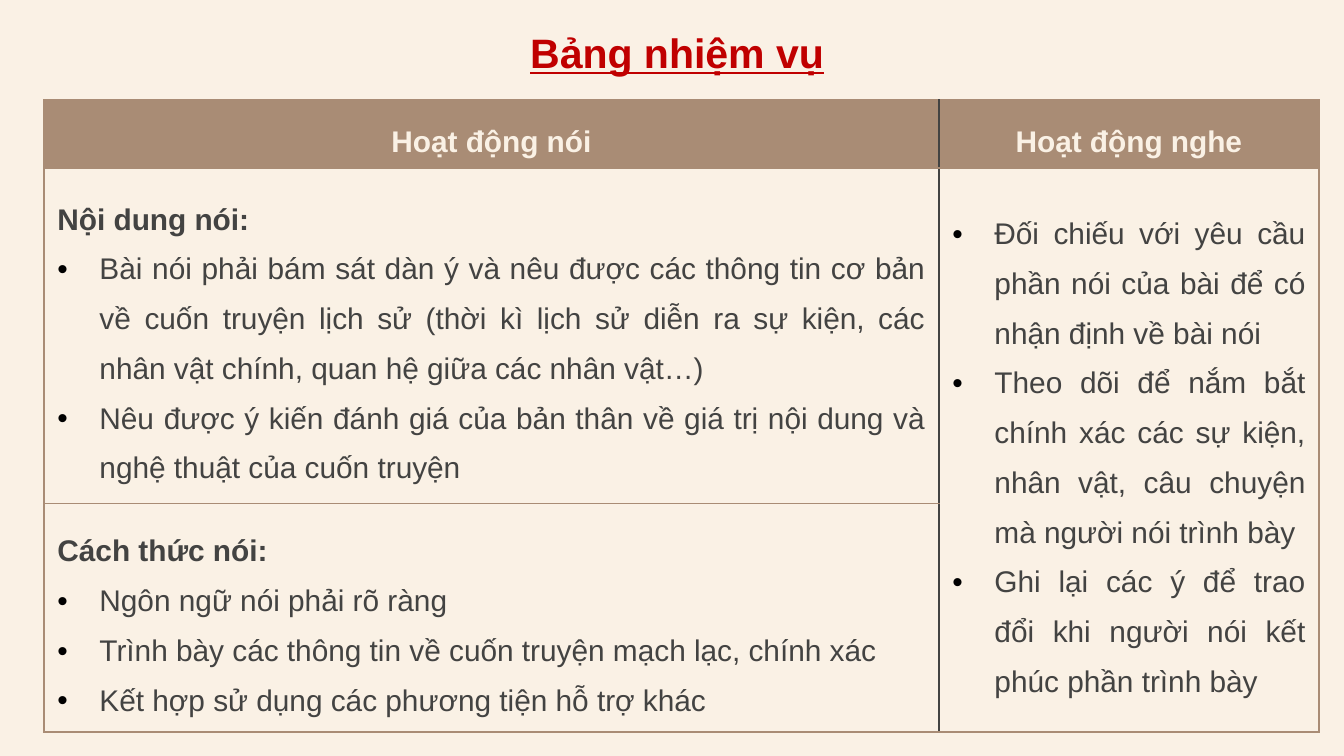
from dataclasses import dataclass

from lxml.etree import SubElement
from pptx import Presentation
from pptx.dml.color import RGBColor
from pptx.enum.text import MSO_ANCHOR, PP_ALIGN
from pptx.oxml.ns import qn
from pptx.util import Emu, Pt


@dataclass(frozen=True)
class Theme:
    """Colours, fonts and type sizes of the slide."""
    background: str = "FAF1E5"
    title: str = "C00000"
    brown: str = "A98C75"
    dark: str = "434342"
    bullet: str = "000000"
    font: str = "Arial"
    title_size: int = 22
    body_size: int = 16
    thin: float = 0.75
    thick: float = 1.5


THEME = Theme()
EMU_PER_PX = 914400 / 134.4
COLUMNS = (895, 380)
ROWS = (68, 335, 228)
HEADERS = ("Hoạt động nói", "Hoạt động nghe")
SPEAKING_CONTENT = (
    "Bài nói phải bám sát dàn ý và nêu được các thông tin cơ bản về cuốn truyện lịch sử "
    "(thời kì lịch sử diễn ra sự kiện, các nhân vật chính, quan hệ giữa các nhân vật…)",
    "Nêu được ý kiến đánh giá của bản thân về giá trị nội dung và nghệ thuật của cuốn truyện",
)
SPEAKING_MANNER = (
    "Ngôn ngữ nói phải rõ ràng",
    "Trình bày các thông tin về cuốn truyện mạch lạc, chính xác",
    "Kết hợp sử dụng các phương tiện hỗ trợ khác",
)
LISTENING = (
    "Đối chiếu với yêu cầu phần nói của bài để có nhận định về bài nói",
    "Theo dõi để nắm bắt chính xác các sự kiện, nhân vật, câu chuyện mà người nói trình bày",
    "Ghi lại các ý để trao đổi khi người nói kết phúc phần trình bày",
)


def px(length):
    """Turn pixels into EMU."""
    return Emu(round(length * EMU_PER_PX))


def rgb(color):
    """Turn a hex string into a colour."""
    return RGBColor.from_string(color)


def style_paragraph(paragraph, color, size, bold, alignment):
    """Format a paragraph and its runs."""
    paragraph.alignment = alignment
    for run in paragraph.runs:
        run.font.name = THEME.font
        run.font.size = Pt(size)
        run.font.bold = bold
        run.font.color.rgb = rgb(color)


def add_bullet(paragraph):
    """Give a paragraph a hanging bullet."""
    properties = paragraph._p.get_or_add_pPr()
    properties.set("marL", str(px(42)))
    properties.set("indent", str(-px(42)))
    color = SubElement(properties, qn("a:buClr"))
    SubElement(color, qn("a:srgbClr"), val=THEME.bullet)
    SubElement(properties, qn("a:buFont"), typeface=THEME.font)
    SubElement(properties, qn("a:buChar"), char="•")


def set_border(cell, side, color, width):
    """Draw one side of a cell."""
    line = SubElement(cell._tc.get_or_add_tcPr(), qn(f"a:ln{side}"), w=str(Pt(width)))
    fill = SubElement(line, qn("a:solidFill"))
    SubElement(fill, qn("a:srgbClr"), val=color)


def set_borders(cell, divider):
    """Draw all sides, with the column divider dark and thick."""
    for side in "LRTB":
        if side == divider:
            set_border(cell, side, THEME.dark, THEME.thick)
        else:
            set_border(cell, side, THEME.brown, THEME.thin)


def fill_header(cell, text):
    """Write a header cell."""
    cell.text_frame.text = text
    paragraph = cell.text_frame.paragraphs[0]
    paragraph.line_spacing = 1.5
    style_paragraph(paragraph, THEME.background, THEME.body_size, True, PP_ALIGN.CENTER)
    cell.fill.solid()
    cell.fill.fore_color.rgb = rgb(THEME.brown)


def fill_body(cell, items, heading=None):
    """Write an optional heading and a bulleted list."""
    lines = ([heading] if heading else []) + list(items)
    cell.text_frame.text = "\n".join(lines)
    for index, paragraph in enumerate(cell.text_frame.paragraphs):
        is_heading = heading is not None and index == 0
        paragraph.line_spacing = 1.5
        style_paragraph(paragraph, THEME.dark, THEME.body_size, is_heading, PP_ALIGN.JUSTIFY)
        if not is_heading:
            add_bullet(paragraph)


def add_title(slide):
    """Add the underlined title."""
    box = slide.shapes.add_textbox(px(517), px(21), px(328), px(63))
    box.text_frame.word_wrap = True
    box.text_frame.text = "Bảng nhiệm vụ"
    paragraph = box.text_frame.paragraphs[0]
    style_paragraph(paragraph, THEME.title, THEME.title_size, True, PP_ALIGN.JUSTIFY)
    paragraph.runs[0].font.underline = True


def add_task_table(slide):
    """Add the table of speaking and listening tasks."""
    frame = slide.shapes.add_table(
        len(ROWS), len(COLUMNS), px(44), px(100), px(sum(COLUMNS)), px(sum(ROWS)))
    table = frame.table
    table.first_row = False
    table.horz_banding = False
    for column, width in zip(table.columns, COLUMNS):
        column.width = px(width)
    for row, height in zip(table.rows, ROWS):
        row.height = px(height)
        for cell, divider in zip(row.cells, "RL"):
            set_borders(cell, divider)
            cell.vertical_anchor = MSO_ANCHOR.MIDDLE
            cell.fill.background()
    table.cell(1, 1).merge(table.cell(2, 1))
    for column, text in enumerate(HEADERS):
        fill_header(table.cell(0, column), text)
    fill_body(table.cell(1, 0), SPEAKING_CONTENT, "Nội dung nói:")
    fill_body(table.cell(2, 0), SPEAKING_MANNER, "Cách thức nói:")
    fill_body(table.cell(1, 1), LISTENING)


def main():
    """Build and save the slide."""
    presentation = Presentation()
    presentation.slide_width = px(1344)
    presentation.slide_height = px(756)
    slide = presentation.slides.add_slide(presentation.slide_layouts[6])
    slide.background.fill.solid()
    slide.background.fill.fore_color.rgb = rgb(THEME.background)
    add_title(slide)
    add_task_table(slide)
    presentation.save("out.pptx")


if __name__ == "__main__":
    main()
